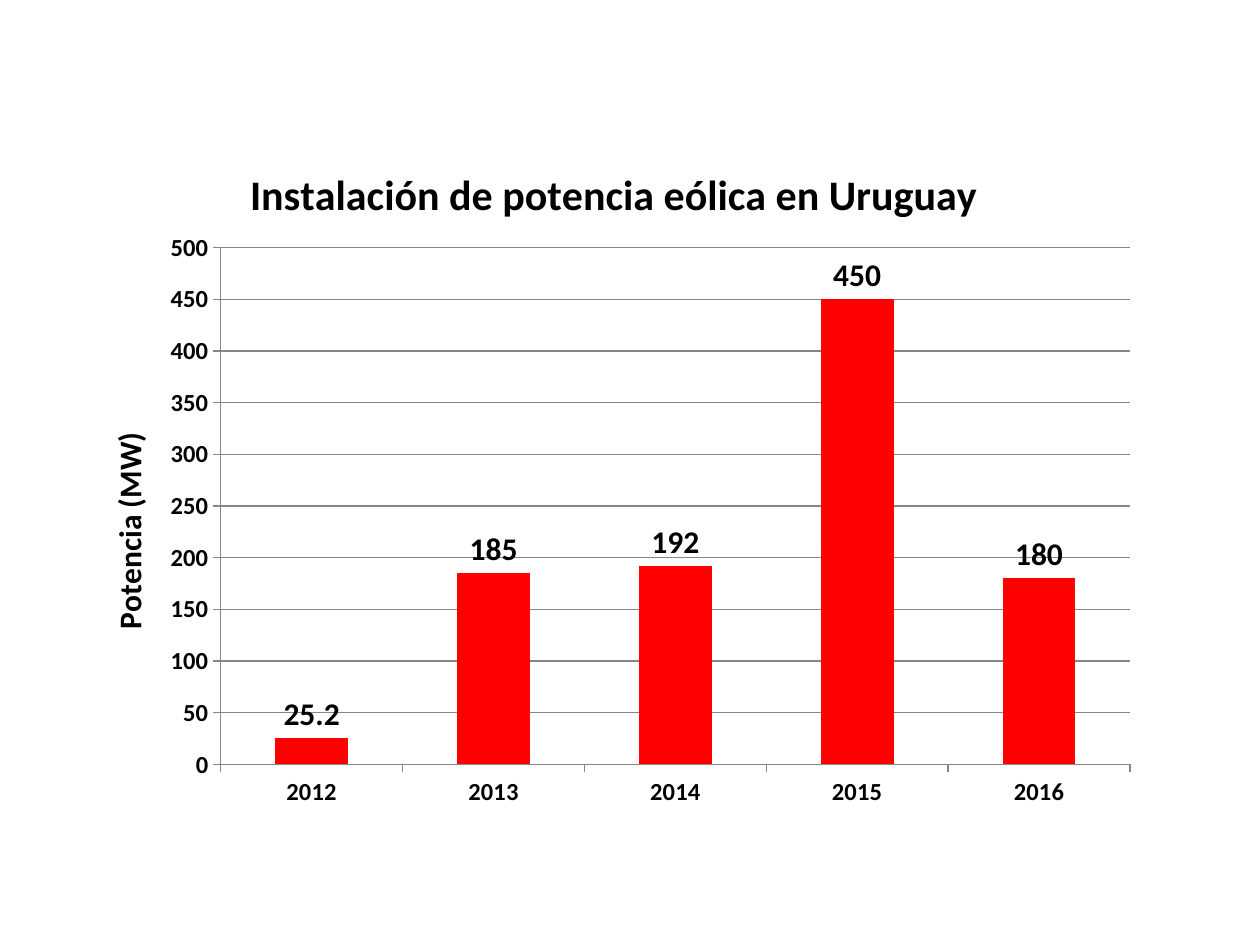
from lxml import etree
from pptx import Presentation
from pptx.chart.data import CategoryChartData
from pptx.dml.color import RGBColor
from pptx.enum.chart import XL_CHART_TYPE, XL_LABEL_POSITION, XL_TICK_MARK
from pptx.oxml.ns import qn
from pptx.util import Inches, Pt

COLUMNS = XL_CHART_TYPE.COLUMN_CLUSTERED
ABOVE = XL_LABEL_POSITION.OUTSIDE_END
OUTSIDE = XL_TICK_MARK.OUTSIDE

TITLE = "Instalación de potencia eólica en Uruguay"
UNIT = "Potencia (MW)"
POWER = {"2012": 25.2, "2013": 185, "2014": 192, "2015": 450, "2016": 180}
BOX = (0.55, 1.09, 8.59, 5.47)
BLACK, RED, GRAY = "000000", "FF0000", "868686"
SCALE = {"minimum_scale": 0, "maximum_scale": 500, "major_unit": 50,
         "has_major_gridlines": True}


def color(text):
    return RGBColor.from_string(text)


def style(font, size):
    look = {"name": "Calibri", "size": Pt(size), "bold": True}
    for key, value in look.items():
        setattr(font, key, value)
    font.color.rgb = color(BLACK)


def write(title, text, size):
    frame = title.text_frame
    frame.text = text
    style(frame.paragraphs[0].runs[0].font, size)


def rule(line):
    line.color.rgb = color(GRAY)
    line.width = Pt(0.75)


def place(node, index, **spots):
    """Fix a chart part by fractions of the chart's size."""
    for old in node.findall(qn("c:layout")):
        node.remove(old)
    layout = etree.Element(qn("c:layout"))
    manual = etree.SubElement(layout, qn("c:manualLayout"))
    if "w" in spots:
        etree.SubElement(manual, qn("c:layoutTarget"), val="inner")
    for key in ("x", "y"):
        etree.SubElement(manual, qn(f"c:{key}Mode"), val="edge")
    for key, value in spots.items():
        etree.SubElement(manual, qn(f"c:{key}"), val=str(value))
    node.insert(index, layout)


deck = Presentation()
deck.slide_width, deck.slide_height = Inches(10), Inches(7.5)
slide = deck.slides.add_slide(deck.slide_layouts[6])

data = CategoryChartData()
data.categories = list(POWER)
data.add_series("Potencia", list(POWER.values()))
chart = slide.shapes.add_chart(COLUMNS, *map(Inches, BOX), data).chart
chart.has_legend = False
style(chart.font, 10)

years, power = chart.category_axis, chart.value_axis
for key, value in SCALE.items():
    setattr(power, key, value)
for axis in (years, power):
    axis.major_tick_mark = OUTSIDE
    style(axis.tick_labels.font, 14)
    rule(axis.format.line)
rule(power.major_gridlines.format.line)

write(chart.chart_title, TITLE, 24)
write(power.axis_title, UNIT, 18)

plot = chart.plots[0]
plot.gap_width = 150
plot.vary_by_categories = False
fill = plot.series[0].format.fill
fill.solid()
fill.fore_color.rgb = color(RED)
plot.has_data_labels = True
labels = plot.data_labels
labels.show_value = True
labels.position = ABOVE
style(labels.font, 18)

area = chart.element.find(".//" + qn("c:plotArea"))
place(area, 0, x=0.14, y=0.16, w=0.84, h=0.75)
place(chart.chart_title.element, 1, x=0.16, y=0.03)
place(power.axis_title.element, 1, x=0.03, y=0.42)

deck.save("out.pptx")
